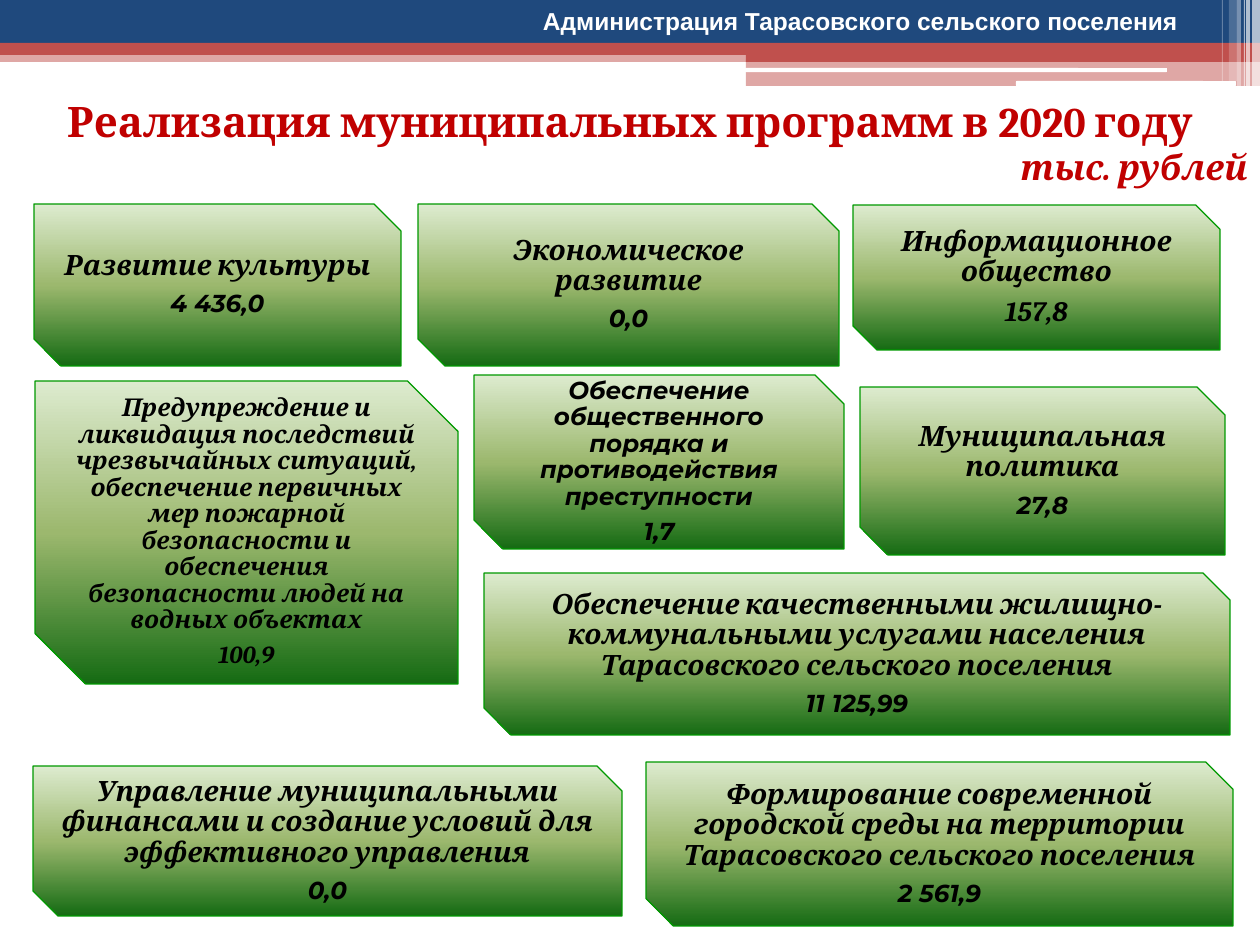
from copy import deepcopy

from pptx import Presentation
from pptx import util as u
from pptx.dml.color import RGBColor
from pptx.enum import shapes, text
from pptx.oxml.xmlchemy import OxmlElement

COLORS = {
    "navy": "1F497D", "red": "C0504D", "white": "FFFFFF", "black": "000000",
    "title": "C00000", "border": "009900",
    "light": "DDEBCF", "middle": "9CB86E", "dark": "156B13",
}
WIDTH, HEIGHT = 1260, 945
SHAPE = shapes.MSO_SHAPE
ALIGN = text.PP_ALIGN

BANDS = [
    (SHAPE.RECTANGLE, 0, 50, 1260, 12, "red", 50),
    (SHAPE.RECTANGLE, 0, 0, 1260, 43, "navy", 100),
    (SHAPE.RECTANGLE, 0, 43, 1260, 12, "red", 100),
    (SHAPE.RECTANGLE, 746, 49, 514, 13, "red", 100),
    (SHAPE.RECTANGLE, 746, 60, 514, 26, "red", 50),
    (SHAPE.ROUNDED_RECTANGLE, 745, 68, 422, 4, "white", 100),
    (SHAPE.ROUNDED_RECTANGLE, 1016, 81, 220, 5, "white", 100),
]
STRIPES = [
    (1252, 8, 86, 65), (1246, 4, 86, 65), (1244, 1, 86, 60),
    (1237, 4, 86, 40), (1229, 8, 81, 20), (1222, 1, 81, 30),
]
SERIF, SANS = ("Cambria", 16), ("Montserrat", 14)
SMALL_SERIF = ("Cambria", 14)
PROGRAMS = [
    ((34, 204, 367, 162), "Развитие культуры", SERIF, "4 436,0", SANS),
    ((418, 204, 421, 162), "Экономическое развитие", SERIF, "0,0", SANS),
    ((853, 205, 367, 145), "Информационное общество", SERIF, "157,8", SERIF),
    ((474, 375, 370, 174),
     "Обеспечение общественного порядка и противодействия преступности",
     SANS, "1,7", SANS),
    ((35, 381, 423, 303),
     "Предупреждение и ликвидация последствий чрезвычайных ситуаций, "
     "обеспечение первичных мер пожарной безопасности и обеспечения "
     "безопасности людей на водных объектах", SMALL_SERIF, "100,9", SMALL_SERIF),
    ((860, 387, 365, 168), "Муниципальная политика", SERIF, "27,8", SANS),
    ((33, 766, 589, 150),
     "Управление муниципальными финансами и создание условий для "
     "эффективного управления", SERIF, "0,0", SANS),
    ((646, 762, 587, 164),
     "Формирование современной городской среды на территории "
     "Тарасовского сельского поселения", SERIF, "2 561,9", SANS),
    ((484, 573, 746, 162),
     "Обеспечение качественными жилищно-коммунальными услугами населения "
     "Тарасовского сельского поселения", SERIF, "11 125,99", SANS),
]


def px(value):
    return u.Emu(round(value * 914400 / 126))


def rgb(name):
    return RGBColor.from_string(COLORS[name])


def add_shape(slide, kind, box):
    shape = slide.shapes.add_shape(kind, *map(px, box))
    shape.shadow.inherit = False
    return shape


def add_band(slide, kind, box, color, opacity):
    shape = add_shape(slide, kind, box)
    shape.fill.solid()
    shape.fill.fore_color.rgb = rgb(color)
    shape.line.fill.background()
    if opacity < 100:
        alpha = OxmlElement("a:alpha")
        alpha.set("val", str(opacity * 1000))
        shape.fill._xPr.find(".//{*}srgbClr").append(alpha)


def add_text_box(slide, box):
    frame = slide.shapes.add_textbox(*map(px, box)).text_frame
    frame.word_wrap = True
    return frame


def style(paragraph, words, family, size, color, align, italic=False):
    paragraph.text = words
    paragraph.alignment = align
    font = paragraph.font
    font.name, font.size = family, u.Pt(size)
    font.bold, font.italic = True, italic
    font.color.rgb = rgb(color)


def add_header(slide, box):
    left, top, width, height = box
    for kind, x, y, w, h, color, opacity in BANDS:
        add_band(slide, kind, (left + x, top + y, w, h), color, opacity)
    for x, w, h, opacity in STRIPES:
        add_band(slide, SHAPE.RECTANGLE, (left + x, top, w, h), "white", opacity)
    frame = add_text_box(slide, (left + 461, top, width - 461, 43))
    style(frame.paragraphs[0], "Администрация Тарасовского сельского поселения",
          "Arial", 14, "white", ALIGN.CENTER)


def add_title(slide, box):
    frame = add_text_box(slide, box)
    style(frame.paragraphs[0], "Реализация муниципальных программ в 2020 году",
          "Cambria", 24, "title", ALIGN.CENTER)
    style(frame.add_paragraph(), "тыс. рублей",
          "Cambria", 20, "title", ALIGN.RIGHT, True)


def fill_gradient(shape):
    fill = shape.fill
    fill.gradient()
    fill.gradient_angle = 270
    stop_list = fill._xPr.find(".//{*}gsLst")
    stop_list.insert(1, deepcopy(stop_list[0]))
    for stop, color, position in zip(
            fill.gradient_stops, ("light", "middle", "dark"), (0, 0.5, 1)):
        stop.color.rgb = rgb(color)
        stop.position = position


def space_lines(paragraph):
    paragraph.line_spacing = 0.9
    after = OxmlElement("a:spcAft")
    percent = OxmlElement("a:spcPct")
    percent.set("val", "35000")
    after.append(percent)
    paragraph._p.get_or_add_pPr().append(after)


def add_program(slide, box, name, name_font, amount, amount_font):
    shape = add_shape(slide, SHAPE.SNIP_2_DIAG_RECTANGLE, box)
    fill_gradient(shape)
    shape.line.color.rgb = rgb("border")
    shape.line.width = u.Pt(0.75)
    frame = shape.text_frame
    frame.word_wrap = True
    frame.vertical_anchor = text.MSO_ANCHOR.MIDDLE
    frame.margin_left = frame.margin_right = px(9)
    frame.margin_top = frame.margin_bottom = px(9)
    paragraphs = (frame.paragraphs[0], frame.add_paragraph())
    contents = ((name, name_font), (amount, amount_font))
    for paragraph, (words, (family, size)) in zip(paragraphs, contents):
        space_lines(paragraph)
        style(paragraph, words, family, size, "black", ALIGN.CENTER, True)


def main():
    presentation = Presentation()
    presentation.slide_width, presentation.slide_height = px(WIDTH), px(HEIGHT)
    slide = presentation.slides.add_slide(presentation.slide_layouts[6])
    add_header(slide, (0, 0, WIDTH, 86))
    for program in PROGRAMS:
        add_program(slide, *program)
    add_title(slide, (0, 89, WIDTH, 108))
    presentation.save("out.pptx")


if __name__ == "__main__":
    main()
